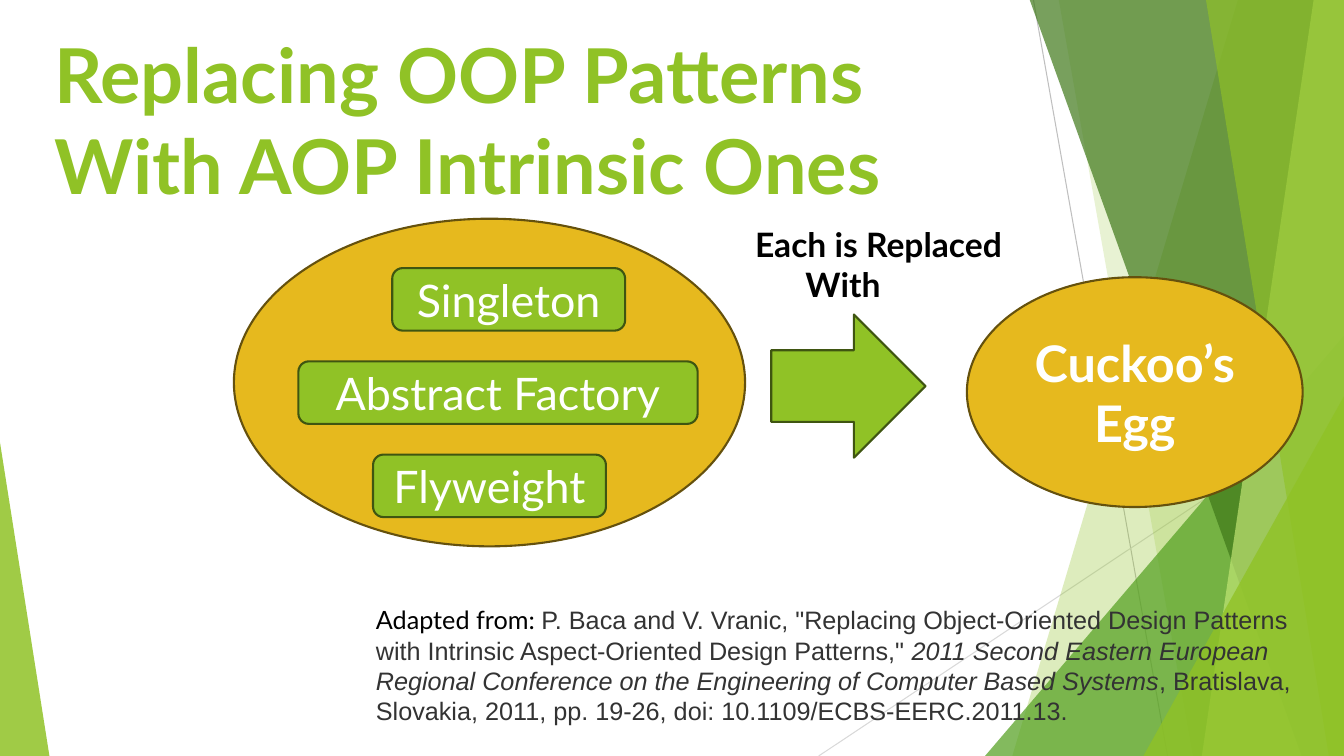
import dataclasses
import typing

import lxml.etree
import pptx
import pptx.dml.color
import pptx.enum.shapes
import pptx.enum.text
import pptx.oxml.ns
import pptx.util

Inches = pptx.util.Inches
Form = pptx.enum.shapes.MSO_SHAPE
Align = pptx.enum.text.PP_ALIGN
Anchor = pptx.enum.text.MSO_ANCHOR
qn = pptx.oxml.ns.qn

COLORS = {
    "green": "90C226", "leaf": "54A021", "dark": "3F7819", "pale": "C0E474",
    "gold": "E6B91E", "brown": "65510D", "moss": "3F5511",
    "gray": "BFBFBF", "mist": "D9D9D9",
    "white": "FFFFFF", "black": "000000", "ink": "333333",
}


@dataclasses.dataclass
class Facet:
    """A clear pane: a quad from its top and base edges."""
    top: tuple[float, float]
    base: tuple[float, float]
    color: str
    alpha: int


@dataclasses.dataclass
class Wedge:
    """A clear right triangle whose peak is at one side."""
    box: tuple[float, float, float, float]
    peak: float
    color: str
    alpha: int


@dataclasses.dataclass
class Node:
    """A filled and outlined part of the diagram."""
    form: typing.Any
    box: tuple[float, float, float, float]
    fill: str
    edge: str
    text: str = ""
    size: int = 32
    bold: bool = False


def rgb(name: str) -> pptx.dml.color.RGBColor:
    return pptx.dml.color.RGBColor.from_string(COLORS[name])


def place(box: tuple[float, float, float, float]) -> list[int]:
    return [Inches(v) for v in box]


def write(para: typing.Any, text: str, *, size: int = 18, font: str = "Lato",
          color: str = "black", bold: bool = False, slant: bool = False,
          align: typing.Any = Align.LEFT) -> None:
    para.alignment = align
    run = para.add_run()
    run.text = text
    run.font.size = pptx.util.Pt(size)
    run.font.name = font
    run.font.bold = bold
    run.font.italic = slant
    run.font.color.rgb = rgb(color)


def paint(shape: typing.Any, color: str, alpha: int = 100) -> None:
    shape.shadow.inherit = False
    shape.fill.solid()
    shape.fill.fore_color.rgb = rgb(color)
    if alpha < 100:
        tone = shape.fill._xPr.find(qn("a:solidFill"))[0]
        lxml.etree.SubElement(tone, qn("a:alpha")).set("val", str(alpha * 1000))


def add_line(shapes: typing.Any, ends: tuple[float, float, float, float], color: str) -> None:
    line = shapes.add_connector(pptx.enum.shapes.MSO_CONNECTOR.STRAIGHT, *place(ends))
    line.line.color.rgb = rgb(color)
    line.line.width = pptx.util.Pt(0.75)
    lxml.etree.SubElement(line._element.spPr, qn("a:effectLst"))


def add_pane(shapes: typing.Any, pane: Facet | Wedge) -> None:
    if isinstance(pane, Wedge):
        shape = shapes.add_shape(Form.ISOSCELES_TRIANGLE, *place(pane.box))
        shape.adjustments[0] = pane.peak
    else:
        (left, right), (start, end) = pane.top, pane.base
        spots = [(left, -0.01), (right, -0.01), (end, 7.5), (start, 7.5)]
        first, *rest = [(Inches(x), Inches(y)) for x, y in spots]
        form = shapes.build_freeform(*first)
        form.add_line_segments(rest, close=True)
        shape = form.convert_to_shape()
    paint(shape, pane.color, pane.alpha)
    shape.line.fill.background()


def add_node(shapes: typing.Any, node: Node) -> None:
    shape = shapes.add_shape(node.form, *place(node.box))
    paint(shape, node.fill)
    shape.line.color.rgb = rgb(node.edge)
    shape.line.width = pptx.util.Pt(1.5)
    if node.text:
        frame = shape.text_frame
        frame.word_wrap = True
        frame.vertical_anchor = Anchor.MIDDLE
        write(frame.paragraphs[0], node.text, size=node.size, color="white",
              bold=node.bold, align=Align.CENTER)


def add_frame(shapes: typing.Any, box: tuple[float, float, float, float]) -> typing.Any:
    frame = shapes.add_textbox(*place(box)).text_frame
    frame.word_wrap = True
    return frame


EDGE = 13.33
LINES = [((10.25, 0, 11.58, 7.5), "gray"), ((EDGE, 4.03, 8.12, 7.5), "mist")]
PANES = [
    Facet((12.28, EDGE), (10.04, EDGE), "green", 30),
    Facet((10.5, EDGE), (11.83, EDGE), "green", 20),
    Wedge((9.77, 3.33, 3.56, 4.17), 1, "leaf", 72),
    Facet((10.21, EDGE), (12.91, EDGE), "dark", 70),
    Facet((13.03, EDGE), (11.92, EDGE), "pale", 70),
    Facet((11.96, EDGE), (13.18, EDGE), "green", 65),
    Wedge((11.34, 3.93, 1.99, 3.57), 1, "green", 80),
    Wedge((0, 4.39, 0.49, 3.11), 0, "green", 85),
]
LABELS = [("Singleton", 3.89, 2.31), ("Abstract Factory", 2.96, 3.96), ("Flyweight", 3.7, 2.31)]
NODES = [
    Node(Form.OVAL, (2.32, 2.17, 5.07, 3.25), "gold", "brown"),
    *[Node(Form.ROUNDED_RECTANGLE, (left, 2.66 + 0.925 * i, width, 0.62), "green", "moss", text)
      for i, (text, left, width) in enumerate(LABELS)],
    Node(Form.RIGHT_ARROW, (7.65, 3.12, 1.53, 1.42), "green", "moss"),
    Node(Form.OVAL, (9.59, 2.75, 3.33, 2.28), "gold", "brown", "Cuckoo’s Egg", 36, True),
]
SOURCE = [
    ("Adapted from: ", {}),
    ('P. Baca and V. Vranic, "Replacing Object-Oriented Design Patterns with '
     'Intrinsic Aspect-Oriented Design Patterns," ', {"font": "Arial", "color": "ink"}),
    ("2011 Second Eastern European Regional Conference on the Engineering of "
     "Computer Based Systems", {"font": "Arial", "color": "ink", "slant": True}),
    (", Bratislava, Slovakia, 2011, pp. 19-26, doi: 10.1109/ECBS-EERC.2011.13.",
     {"font": "Arial", "color": "ink"}),
]


def main() -> None:
    deck = pptx.Presentation()
    deck.slide_width, deck.slide_height = Inches(EDGE), Inches(7.5)
    slide = deck.slides.add_slide(deck.slide_layouts[5])
    shapes = slide.shapes

    # Backdrop
    title = shapes.title
    for ends, color in LINES:
        add_line(shapes, ends, color)
    for pane in PANES:
        add_pane(shapes, pane)

    # Title, raised above the backdrop
    shapes._spTree.append(title._element)
    title.left, title.top, title.width, title.height = place((0.44, 0.23, 9.4, 1.44))
    frame = title.text_frame
    frame.word_wrap = True
    frame.auto_size = pptx.enum.text.MSO_AUTO_SIZE.NONE
    frame.vertical_anchor = Anchor.TOP
    write(frame.paragraphs[0], "Replacing OOP Patterns With AOP Intrinsic Ones",
          size=54, color="green", bold=True)

    # Source note
    note = add_frame(shapes, (3.63, 5.95, 9.33, 1.31)).paragraphs[0]
    for text, style in SOURCE:
        write(note, text, **style)

    # Arrow caption, its second line set in by a tab stop
    frame = add_frame(shapes, (7.39, 2.17, 6.07, 0.91))
    write(frame.paragraphs[0], "Each is Replaced", size=24, bold=True)
    para = frame.add_paragraph()
    write(para, "\tWith", size=24, bold=True)
    tabs = lxml.etree.SubElement(para._p.get_or_add_pPr(), qn("a:tabLst"))
    stop = lxml.etree.SubElement(tabs, qn("a:tab"))
    stop.set("pos", str(Inches(0.5)))
    stop.set("algn", "l")

    # Diagram
    for node in NODES:
        add_node(shapes, node)

    deck.save("out.pptx")


if __name__ == "__main__":
    main()
